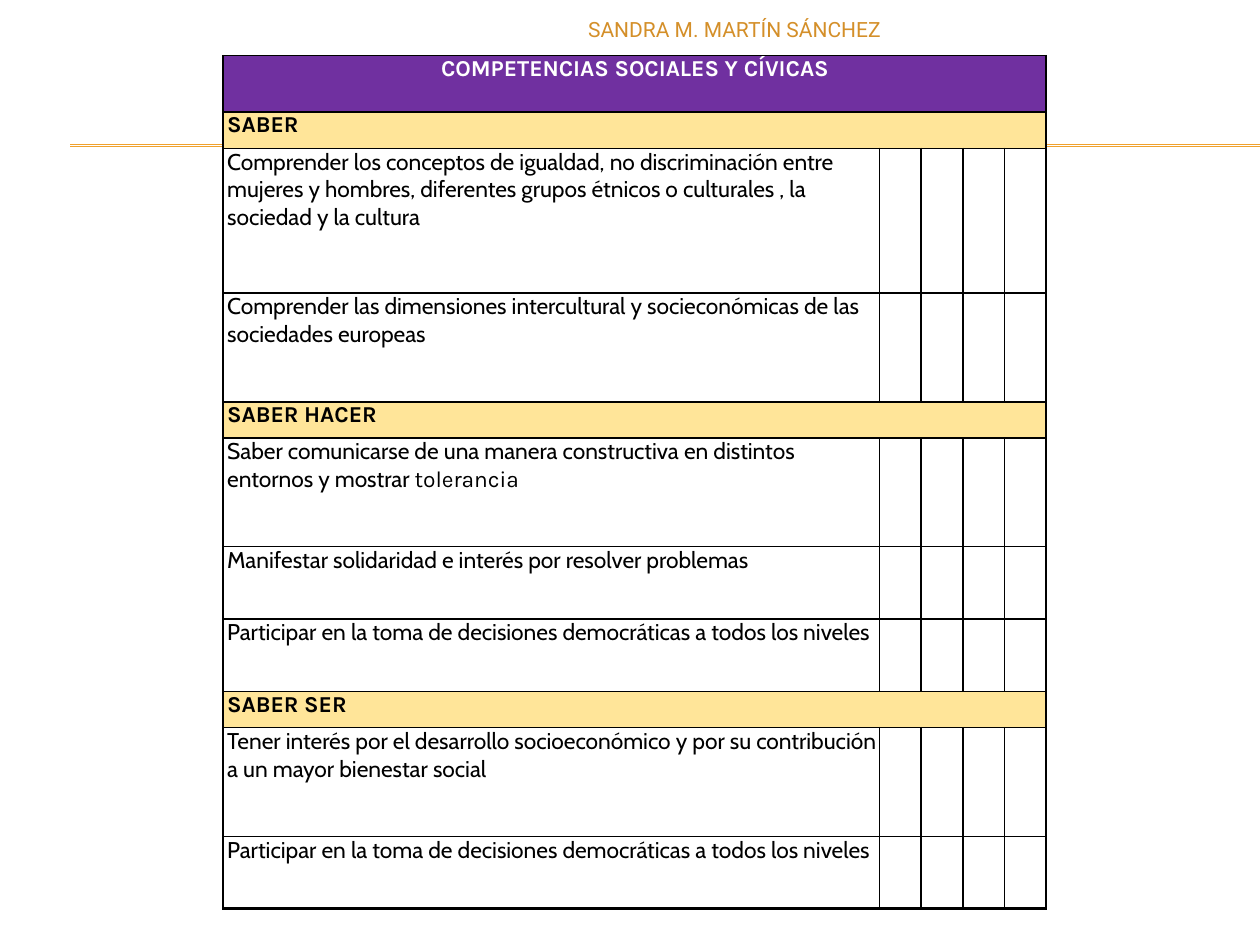
from dataclasses import dataclass

from lxml.etree import SubElement
from pptx import Presentation
from pptx.dml.color import RGBColor
from pptx.enum.shapes import MSO_CONNECTOR
from pptx.enum.text import PP_ALIGN
from pptx.oxml.ns import qn
from pptx.util import Cm, Pt


@dataclass(frozen=True)
class Theme:
    black: RGBColor = RGBColor(0x00, 0x00, 0x00)
    white: RGBColor = RGBColor(0xFF, 0xFF, 0xFF)
    purple: RGBColor = RGBColor(0x70, 0x30, 0xA0)
    cream: RGBColor = RGBColor(0xFF, 0xE5, 0x99)
    rule: RGBColor = RGBColor(0xF0, 0xA2, 0x2E)
    author: RGBColor = RGBColor(0xD4, 0x8F, 0x29)
    heading_font: str = "Karla"
    body_font: str = "Cabin"
    author_font: str = "Roboto"
    table_size: Pt = Pt(13)
    author_size: Pt = Pt(12)
    rule_width: Pt = Pt(0.75)
    border_width: Pt = Pt(1)
    bottom_width: Pt = Pt(2.25)


THEME = Theme()

TITLE = "COMPETENCIAS SOCIALES Y CÍVICAS"
# Each section holds its criteria as (text runs, number of text lines).
SECTIONS = {
    "SABER": [
        (["Comprender los conceptos de igualdad, no discriminación entre mujeres y hombres, "
          "diferentes grupos étnicos o culturales , la sociedad y la cultura"], 3),
        (["Comprender las dimensiones intercultural y socieconómicas de las "
          "sociedades europeas"], 2),
    ],
    "SABER HACER": [
        (["Saber comunicarse de una manera constructiva en distintos entornos y mostrar ",
          "tolerancia"], 2),
        (["Manifestar solidaridad e interés por resolver problemas"], 1),
        (["Participar en la toma de decisiones democráticas a todos los niveles"], 1),
    ],
    "SABER SER": [
        (["Tener interés por el desarrollo socioeconómico y por su contribución "
          "a un mayor bienestar social"], 2),
        (["Participar en la toma de decisiones democráticas a todos los niveles"], 1),
    ],
}

TITLE_HEIGHT = Cm(1.14)
LINE_HEIGHT = Cm(0.73)
COLUMN_WIDTHS = [Cm(13.23)] + [Cm(0.84)] * 4


def add_rule(slide, top):
    connector = slide.shapes.add_connector(
        MSO_CONNECTOR.STRAIGHT, Cm(1.42), top, Cm(25.4), top)
    connector.line.color.rgb = THEME.rule
    connector.line.width = THEME.rule_width
    SubElement(connector._element.spPr, qn("a:effectLst"))


def add_author(slide, name):
    box = slide.shapes.add_textbox(Cm(9.96), Cm(0.2), Cm(8.05), Cm(0.81))
    box.text_frame.word_wrap = True
    paragraph = box.text_frame.paragraphs[0]
    paragraph.text = name
    paragraph.alignment = PP_ALIGN.RIGHT
    paragraph.font.name = THEME.author_font
    paragraph.font.size = THEME.author_size
    paragraph.font.color.rgb = THEME.author


def set_borders(cell, bottom_width):
    properties = cell._tc.get_or_add_tcPr()
    for side in ("L", "R", "T", "B"):
        width = bottom_width if side == "B" else THEME.border_width
        line = SubElement(properties, qn(f"a:ln{side}"), w=str(int(width)))
        fill = SubElement(line, qn("a:solidFill"))
        SubElement(fill, qn("a:srgbClr"), val=str(THEME.black))


def write_cell(cell, runs, font_name, color=THEME.black, bold=False):
    paragraph = cell.text_frame.paragraphs[0]
    paragraph.space_after = Pt(8)
    paragraph.font.size = THEME.table_size
    paragraph.font.color.rgb = color
    paragraph.font.bold = bold
    if len(runs) == 1:
        paragraph.font.name = font_name
    for index, text in enumerate(runs):
        run = paragraph.add_run()
        run.text = text
        if len(runs) > 1:
            run.font.name = THEME.heading_font if index else font_name
    return paragraph


def write_band(row, text, fill_color, text_color):
    """Merge a whole row into one filled heading."""
    cells = list(row.cells)
    cells[0].merge(cells[-1])
    cells[0].fill.solid()
    cells[0].fill.fore_color.rgb = fill_color
    return write_cell(cells[0], [text], THEME.heading_font, text_color, bold=True)


def format_grid(table):
    table.first_row = False
    table.horz_banding = False
    for column, width in zip(table.columns, COLUMN_WIDTHS):
        column.width = width
    last_row = len(table.rows) - 1
    for row_index, row in enumerate(table.rows):
        bottom_width = THEME.bottom_width if row_index == last_row else THEME.border_width
        for cell in row.cells:
            cell.margin_left = cell.margin_right = Cm(0.08)
            cell.margin_top = cell.margin_bottom = 0
            set_borders(cell, bottom_width)
            cell.fill.background()


def add_competence_table(slide):
    row_count = 1 + sum(1 + len(criteria) for criteria in SECTIONS.values())
    table = slide.shapes.add_table(
        row_count, len(COLUMN_WIDTHS), Cm(4.5), Cm(1.12), Cm(16.59), Cm(17.2)).table
    format_grid(table)

    rows = iter(table.rows)
    title_row = next(rows)
    title_row.height = TITLE_HEIGHT
    title = write_band(title_row, TITLE, THEME.purple, THEME.white)
    title.alignment = PP_ALIGN.CENTER

    for heading, criteria in SECTIONS.items():
        heading_row = next(rows)
        heading_row.height = LINE_HEIGHT
        write_band(heading_row, heading, THEME.cream, THEME.black)
        for runs, line_count in criteria:
            row = next(rows)
            row.height = LINE_HEIGHT * (line_count + 1)
            write_cell(row.cells[0], runs, THEME.body_font)


def main():
    presentation = Presentation()
    presentation.slide_width = Cm(25.4)
    presentation.slide_height = Cm(19.05)
    slide = presentation.slides.add_slide(presentation.slide_layouts[6])
    for top in (Cm(2.92), Cm(2.95)):
        add_rule(slide, top)
    add_competence_table(slide)
    add_author(slide, "SANDRA M. MARTÍN SÁNCHEZ")
    presentation.save("out.pptx")


if __name__ == "__main__":
    main()
